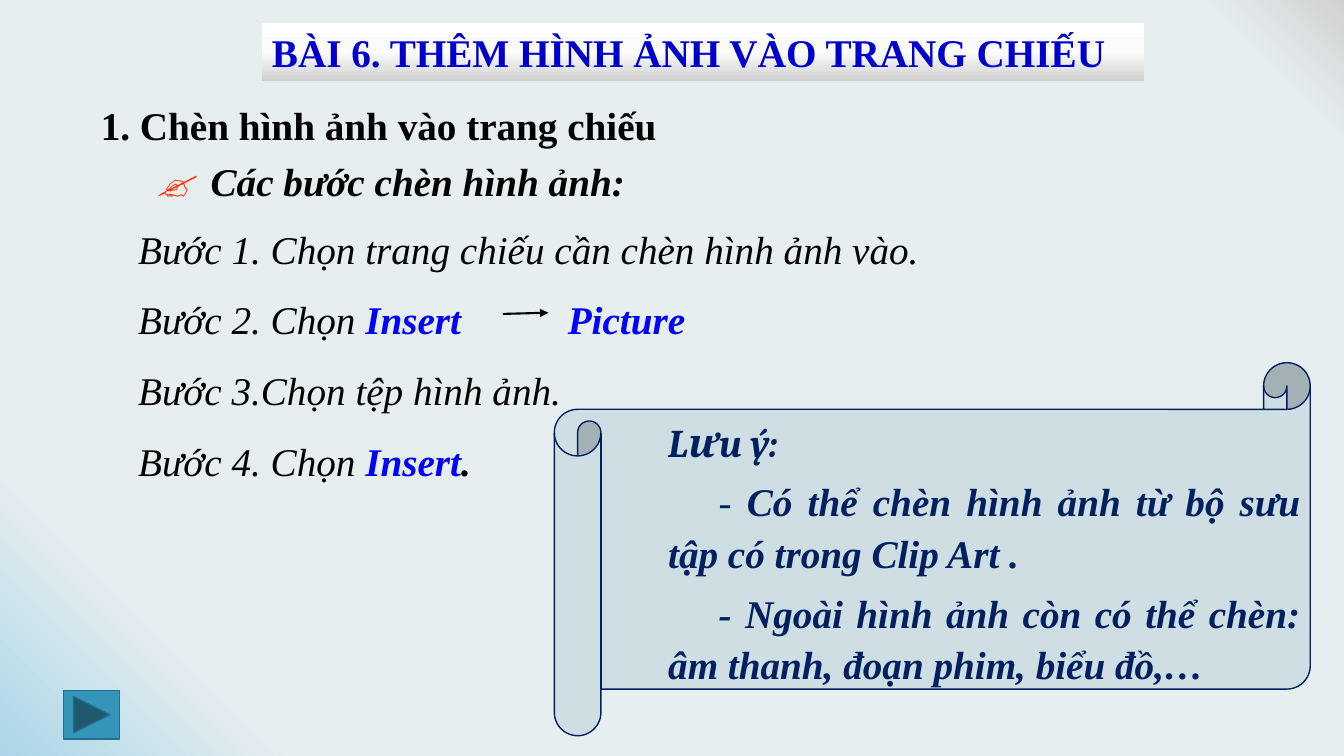
import pptx
import pptx.dml.color
import pptx.enum.shapes
import pptx.enum.text
import pptx.oxml.ns
import pptx.util
from lxml import etree

Cm = pptx.util.Cm
Pt = pptx.util.Pt
qn = pptx.oxml.ns.qn
SHAPE = pptx.enum.shapes.MSO_SHAPE
ALIGN = pptx.enum.text.PP_ALIGN
AUTO_SIZE = pptx.enum.text.MSO_AUTO_SIZE

# Content: each paragraph is a list of (text, style) runs
COLORS = {
    "black": "000000", "blue": "0000FF", "title": "0000CC", "orange": "FF3300",
    "navy": "002060", "scroll": "CEDEE2", "button": "3494BA", "button_line": "266D8A",
}
BACKGROUND_STOPS = [(0, "AAD6E7"), (14, "E6EEF0"), (93, "E6EEF0"), (100, "D1D1D1")]
TITLE_STOPS = [(0, "FFFFFF"), (50, "FBFBFB"), (100, "D1D1D1")]

# style: (color, bold, italic, font)
TIMES = "Times New Roman"
STYLES = {
    "title": ("title", True, False, TIMES),
    "heading": ("black", True, False, TIMES),
    "hand": ("orange", True, True, TIMES),
    "strong": ("black", True, True, TIMES),
    "step": ("black", False, True, TIMES),
    "command": ("blue", True, True, TIMES),
    "note_head": ("navy", True, True, "Cambria"),
    "dash": ("navy", False, True, TIMES),
    "note": ("navy", True, True, TIMES),
}
TITLE = [[("BÀI 6. THÊM HÌNH ẢNH VÀO TRANG CHIẾU", "title")]]
HEADING = [[("1. Chèn hình ảnh vào trang chiếu", "heading")]]
SUBHEADING = [[("✍\t", "hand"), ("Các bước chèn hình ảnh:", "strong")]]
STEPS = [
    [("Bước 1. Chọn trang chiếu cần chèn hình ảnh vào.", "step")],
    [("Bước 2. Chọn ", "step"), ("Insert", "command")],
    [("Bước 3.Chọn tệp hình ảnh.", "step")],
    [("Bước 4. Chọn ", "step"), ("Insert", "command"), (".", "strong")],
]
SECOND_COMMAND = [[("Picture", "command")]]
NOTES = [
    [("Lưu ý:", "note_head")],
    [("- ", "dash"), ("Có thể chèn hình ảnh từ bộ sưu tập có trong Clip Art .", "note")],
    [("- Ngoài hình ảnh còn có thể chèn: âm thanh, đoạn phim, biểu đồ,…", "note")],
]


def rgb(name):
    return pptx.dml.color.RGBColor.from_string(COLORS[name])


def box(left, top, width, height):
    return Cm(left), Cm(top), Cm(width), Cm(height)


def place(shape, *bounds):
    shape.left, shape.top, shape.width, shape.height = box(*bounds)


def set_gradient(fill, element, stops, angle):
    fill.gradient()
    fill.gradient_angle = angle
    stop_list = next(element.iter(qn("a:gsLst")))
    for stop in list(stop_list):
        stop_list.remove(stop)
    for position, color in stops:
        stop = etree.SubElement(stop_list, qn("a:gs"), pos=str(position * 1000))
        etree.SubElement(stop, qn("a:srgbClr"), val=color)


def write(shape, paragraphs, spacing=1.0, tab=None):
    frame = shape.text_frame
    frame.word_wrap = True
    frame.auto_size = (AUTO_SIZE.NONE if shape.is_placeholder
                       else AUTO_SIZE.SHAPE_TO_FIT_TEXT)
    frame.vertical_anchor = pptx.enum.text.MSO_ANCHOR.TOP
    for index, runs in enumerate(paragraphs):
        paragraph = frame.add_paragraph() if index else frame.paragraphs[0]
        paragraph.alignment = ALIGN.LEFT
        paragraph.line_spacing = spacing
        paragraph.space_before = Pt(0)
        for text, style in runs:
            run = paragraph.add_run()
            run.text = text
            color, run.font.bold, run.font.italic, run.font.name = STYLES[style]
            run.font.size = Pt(28)
            run.font.color.rgb = rgb(color)
        properties = paragraph._p.get_or_add_pPr()
        if shape.is_placeholder:
            properties.set("marL", "0")
            properties.set("indent", "0")
            etree.SubElement(properties, qn("a:buNone"))
        if tab:
            tabs = etree.SubElement(properties, qn("a:tabLst"))
            etree.SubElement(tabs, qn("a:tab"), pos=str(Cm(tab)), algn="l")
    return frame.paragraphs


def add_shape(shapes, kind, bounds, fill, line):
    shape = shapes.add_shape(kind, *box(*bounds))
    shape.shadow.inherit = False
    shape.fill.solid()
    shape.fill.fore_color.rgb = rgb(fill)
    shape.line.color.rgb = rgb(line)
    shape.line.width = Pt(1)
    return shape


# Slide and background
presentation = pptx.Presentation()
presentation.slide_width, presentation.slide_height = Cm(33.87), Cm(19.05)
slide = presentation.slides.add_slide(presentation.slide_layouts[1])
shapes = slide.shapes
set_gradient(slide.background.fill, slide.element, BACKGROUND_STOPS, 45)

# Title bar
title = shapes.title
place(title, 6.6, 0.58, 22.23, 1.45)
set_gradient(title.fill, title.element, TITLE_STOPS, 270)
write(title, TITLE)

# Headings
write(shapes.add_textbox(*box(2.29, 2.44, 20.83, 1.45)), HEADING)
write(shapes.add_textbox(*box(3.68, 3.84, 14.4, 1.45)), SUBHEADING, tab=1.38)

# Steps, with an arrow to the second command of step 2
steps = slide.placeholders[1]
place(steps, 3.23, 4.95, 23.01, 7.44)
write(steps, STEPS, spacing=1.5)
write(shapes.add_textbox(*box(14.06, 7.32, 3.9, 1.45)), SECOND_COMMAND)

arrow = shapes.add_connector(
    pptx.enum.shapes.MSO_CONNECTOR.STRAIGHT, Cm(12.67), Cm(7.91), Cm(13.82), Cm(7.88))
arrow.line.color.rgb = rgb("black")
arrow.line.width = Pt(1.5)
etree.SubElement(arrow.line._get_or_add_ln(), qn("a:tailEnd"), type="triangle")
etree.SubElement(arrow.element.spPr, qn("a:effectLst"))

# Note on a scroll
note = shapes.add_group_shape()
add_shape(note.shapes, SHAPE.HORIZONTAL_SCROLL, (13.97, 9.14, 19.05, 9.4), "scroll", "navy")
note_text = note.shapes.add_textbox(*box(16.59, 10.29, 16.43, 7.32))
for paragraph in write(note_text, NOTES, spacing=1.1)[1:]:
    paragraph.alignment = ALIGN.JUSTIFY
    paragraph.space_before = Pt(5.6)
    properties = paragraph._p.get_or_add_pPr()
    properties.set("marL", "0")
    properties.set("indent", str(Cm(1.27)))

# Forward button
add_shape(shapes, SHAPE.ACTION_BUTTON_FORWARD_OR_NEXT, (1.6, 17.4, 1.42, 1.22),
          "button", "button_line")

presentation.save("out.pptx")
